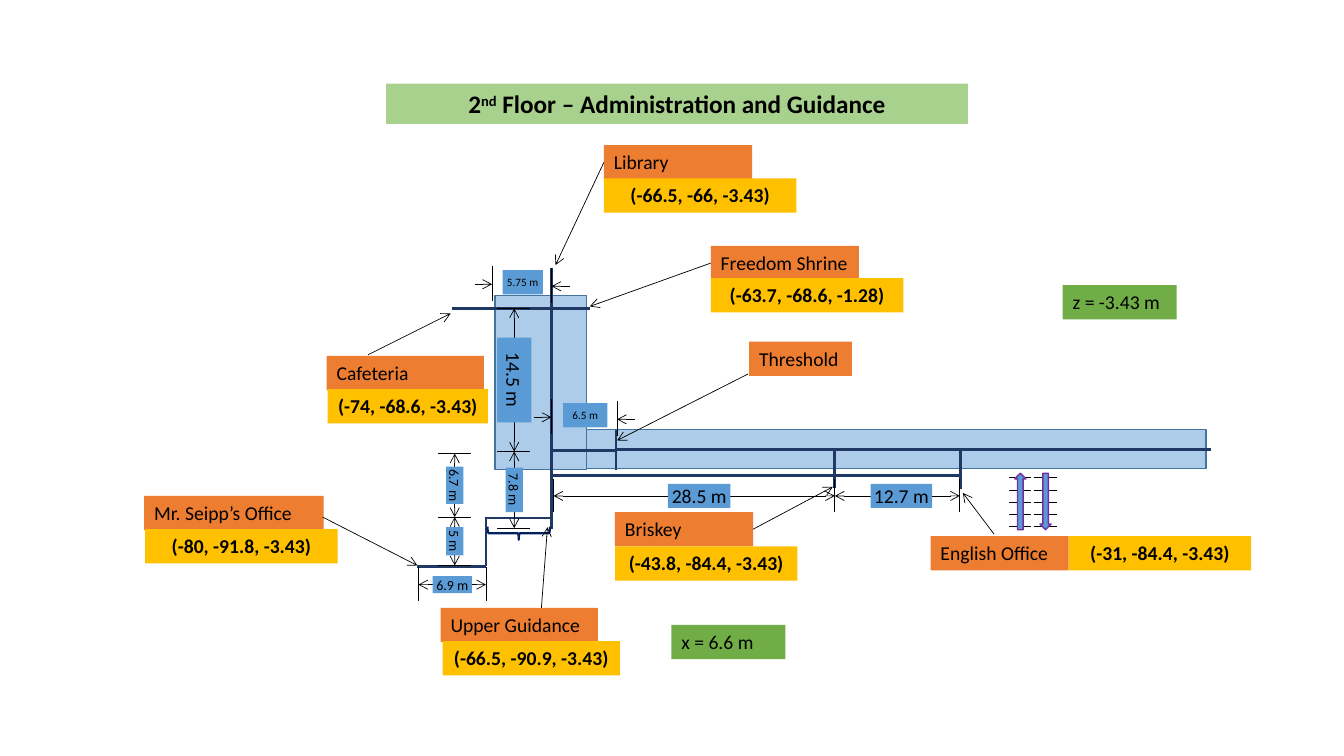
from itertools import pairwise

from lxml.etree import SubElement
from pptx import Presentation
from pptx.dml.color import RGBColor
from pptx.enum.shapes import MSO_CONNECTOR as Link, MSO_SHAPE as Shape
from pptx.enum.text import MSO_ANCHOR as Anchor, MSO_AUTO_SIZE as Fit, PP_ALIGN as Align
from pptx.oxml.ns import qn
from pptx.util import Inches, Pt

BLACK = RGBColor(0x00, 0x00, 0x00)
NAVY = RGBColor(0x20, 0x38, 0x64)
DARK_NAVY = RGBColor(0x00, 0x20, 0x60)
BLUE = RGBColor(0x5B, 0x9B, 0xD5)
EDGE_BLUE = RGBColor(0x43, 0x73, 0x9E)
PURPLE = RGBColor(0x70, 0x30, 0xA0)
ORANGE = RGBColor(0xED, 0x7D, 0x31)
GOLD = RGBColor(0xFF, 0xC0, 0x00)
GREEN = RGBColor(0x70, 0xAD, 0x47)
PALE_GREEN = RGBColor(0xA9, 0xD1, 0x8E)

COLUMNS, ROWS = 133.3, 75
CELL = Inches(0.1)
TAG_HEIGHT = 3.4
LEFT_SIDE, RIGHT_SIDE = 1, 3

# Translucent corridor areas: left, top, width, height
CORRIDORS = [(49.1, 29.3, 9.1, 17.3), (58.2, 42.6, 61.4, 3.9)]

WALLS = [
    ((54.7, 26.6), (54.7, 52.5)), ((44.8, 30.6), (58.5, 30.6)),
    ((54.8, 44.7), (61.1, 44.7)), ((61.1, 44.6), (120.1, 44.6)),
    ((61.1, 42.7), (61.1, 46.6)), ((54.6, 47.2), (95.1, 47.2)),
    ((82.8, 44.5), (82.8, 48.4)), ((95.3, 44.6), (95.3, 48.5)),
    ((48.1, 51.4), (54.6, 51.4)), ((48.2, 51.3), (48.2, 56.2)),
    ((41.4, 56.2), (48.2, 56.2)),
]

# Chained dimensions: upright, axis, stops, labels (text, length, thickness, size, shift)
CHAINS = [
    (True, 51, [30.6, 44.8, 52.4],
     [("14.5 m", 8.4, 3.4, 14, 0), ("7.8 m", 4.4, 1.7, 10, 0)]),
    (True, 45.1, [45, 51.3, 56.1],
     [("6.7 m", 3.7, 1.7, 10, 0), ("5 m", 2.8, 1.7, 10, 0)]),
    (False, 49.2, [54.9, 82.8, 95.2],
     [("28.5 m", 6.2, 2.4, 14, 0.5), ("12.7 m", 6.1, 2.4, 14, 0.4)]),
    (False, 58, [41.5, 48.2], [("6.9 m", 3.9, 1.7, 10, 0)]),
]

# Name, (left, top, width), coordinates, (left, top, width), leader start or side, leader end
PLACES = [
    ("Library", (59.9, 14.4, 14.7), "(-66.5, -66, -3.43)", (59.9, 17.7, 19.1),
     LEFT_SIDE, (55.1, 26.3)),
    ("Freedom Shrine", (70.5, 24.4, 14.7), "(-63.7, -68.6, -1.28)", (70.5, 27.6, 19.1),
     LEFT_SIDE, (58.5, 30.4)),
    ("Threshold", (74.3, 33.9, 10.2), None, None, (74.2, 37.1), (61.2, 43.7)),
    ("Cafeteria", (32.4, 35.3, 15.6), "(-74, -68.6, -3.43)", (32.5, 38.6, 15.9),
     (36.5, 35.2), (44.7, 31.1)),
    ("Briskey", (61, 50.8, 13.7), "(-43.8, -84.4, -3.43)", (61, 54.2, 18.1),
     RIGHT_SIDE, (82.6, 48.3)),
    ("English Office", (92.3, 53.2, 13.7), "(-31, -84.4, -3.43)", (106, 53.2, 18.1),
     (98.6, 53), (95.5, 48.9)),
    ("Mr. Seipp’s Office", (14.3, 49.2, 17.8), "(-80, -91.8, -3.43)", (14.4, 52.5, 19.1),
     (32, 51.3), (41.4, 56.1)),
    ("Upper Guidance", (43.7, 60.3, 15.6), "(-66.5, -90.9, -3.43)", (43.9, 63.6, 17.6),
     (53.7, 60.3), (54.3, 52.3)),
]


def cells(*counts):
    return [round(count * CELL) for count in counts]


class FloorPlan:
    font = {"name": "Calibri", "size": Pt(14), "bold": False}

    def __init__(self, deck):
        self.slide = deck.slides.add_slide(deck.slide_layouts[5])
        self.shapes = self.slide.shapes

    def add_span(self, para, text, **changes):
        span = para.add_run()
        span.text = text
        for name, value in {**self.font, **changes}.items():
            setattr(span.font, name, value)
        span.font.color.rgb = BLACK
        return span

    def title(self, pieces, left, top, width, height):
        """Fill the title; pieces are (text, raised) pairs."""
        box = self.shapes.title
        box.left, box.top, box.width, box.height = cells(left, top, width, height)
        box.fill.solid()
        box.fill.fore_color.rgb = PALE_GREEN
        frame = box.text_frame
        frame.auto_size, frame.vertical_anchor = Fit.NONE, Anchor.MIDDLE
        para = frame.paragraphs[0]
        para.alignment = Align.CENTER
        for text, raised in pieces:
            span = self.add_span(para, text, size=Pt(18), bold=True)
            if raised:
                span._r.get_or_add_rPr().set("baseline", "30000")

    def tag(self, text, left, top, width, fill, centred=False, height=TAG_HEIGHT, **changes):
        box = self.shapes.add_textbox(*cells(left, top, width, height))
        box.fill.solid()
        box.fill.fore_color.rgb = fill
        frame = box.text_frame
        frame.word_wrap = not centred
        para = frame.paragraphs[0]
        para.alignment = Align.CENTER if centred else Align.LEFT
        self.add_span(para, text, **changes)
        return box

    def measure(self, text, center_x, center_y, length, thickness, size, turn=0):
        box = self.tag(text, center_x - length / 2, center_y - thickness / 2, length, BLUE,
                       centred=True, height=thickness, size=Pt(size))
        box.rotation = turn
        frame = box.text_frame
        margins = dict.fromkeys(("left", "top", "right", "bottom"), 0)
        for side, value in margins.items():
            setattr(frame, f"margin_{side}", value)
        frame.vertical_anchor = Anchor.MIDDLE

    def line(self, start, end, color=BLACK, width=0.5, ends=()):
        """Draw a line; ends names the arrowheads, headEnd at start and tailEnd at end."""
        link = self.shapes.add_connector(Link.STRAIGHT, *cells(*start, *end))
        link.line.color.rgb = color
        link.line.width = Pt(width)
        properties = link._element.spPr
        for end_name in ends:
            SubElement(properties.find(qn("a:ln")), qn(f"a:{end_name}"), type="arrow")
        SubElement(properties, qn("a:effectLst"))
        return link

    def figure(self, kind, place, edge, width=1, fill=None, turn=0, opacity=100):
        shape = self.shapes.add_shape(kind, *cells(*place))
        shape.shadow.inherit = False
        shape.rotation = turn
        shape.line.color.rgb, shape.line.width = edge, Pt(width)
        if fill is None:
            shape.fill.background()
            return
        shape.fill.solid()
        shape.fill.fore_color.rgb = fill
        if opacity < 100:
            color = shape._element.spPr.find(qn("a:solidFill"))[0]
            SubElement(color, qn("a:alpha"), val=str(opacity * 1000))

    def chain(self, upright, axis, stops, labels):
        """Draw dimensions end to end, with a tick at every stop."""
        def point(along, across):
            return (across, along) if upright else (along, across)

        for stop in stops:
            self.line(point(stop, axis - 1.7), point(stop, axis + 1.6))
        for (start, end), (text, length, thickness, size, shift) in zip(pairwise(stops), labels):
            self.line(point(start, axis), point(end, axis), ends=("headEnd", "tailEnd"))
            self.measure(text, *point((start + end) / 2 + shift, axis), length, thickness,
                         size, turn=90 if upright else 0)

    def narrow(self, text, left, right, row, length):
        """Draw a dimension whose arrows point inward from outside its ticks."""
        for edge, level, outside in ((left, row, -1.7), (right, row + 0.2, 1.8)):
            self.line((edge, level - 1.8), (edge, level + 1.7))
            self.line((edge + outside, level), (edge, level), ends=("tailEnd",))
        self.measure(text, (left + right) / 2 + 0.1, row - 0.2, length, 2.4, 8)

    def place(self, name, spot, coordinates, coordinate_spot, start, target):
        box = self.tag(name, *spot, ORANGE)
        from_side = isinstance(start, int)
        leader = self.line(spot[:2] if from_side else start, target, ends=("tailEnd",))
        if from_side:
            leader.begin_connect(box, start)
        if coordinates:
            self.tag(coordinates, *coordinate_spot, GOLD, centred=True, bold=True)

    def stairs(self, left, turn):
        for step in range(5):
            row = 47.4 + 1.2 * step
            self.line((left, row), (left + 2.2, row))
        self.figure(Shape.RIGHT_ARROW, (left - 1.7, 49.2, 5.6, 1.1), PURPLE,
                    fill=BLUE, turn=turn)


def main():
    deck = Presentation()
    deck.slide_width, deck.slide_height = cells(COLUMNS, ROWS)
    plan = FloorPlan(deck)
    plan.title([("2", False), ("nd", True), (" Floor – Administration and Guidance", False)],
               38.3, 8.3, 57.7, 4)
    for corridor in CORRIDORS:
        plan.figure(Shape.RECTANGLE, corridor, EDGE_BLUE, fill=BLUE, opacity=50)
    for start, end in WALLS:
        plan.line(start, end, NAVY, 2)
    plan.figure(Shape.RIGHT_BRACE, (50.8, 49.8, 1.3, 6.2), DARK_NAVY, width=1.5, turn=90)
    for chain in CHAINS:
        plan.chain(*chain)
    plan.narrow("5.75 m", 48.8, 54.7, 28.2, 4)
    plan.narrow("6.5 m", 54.7, 61.2, 41.4, 4.4)
    plan.stairs(100.1, 270)
    plan.stairs(102.6, 90)
    for place in PLACES:
        plan.place(*place)
    plan.tag("z = -3.43 m", 105.4, 28.3, 11.3, GREEN)
    plan.tag("x = 6.6 m", 66.6, 62, 11.3, GREEN)
    deck.save("out.pptx")


if __name__ == "__main__":
    main()
